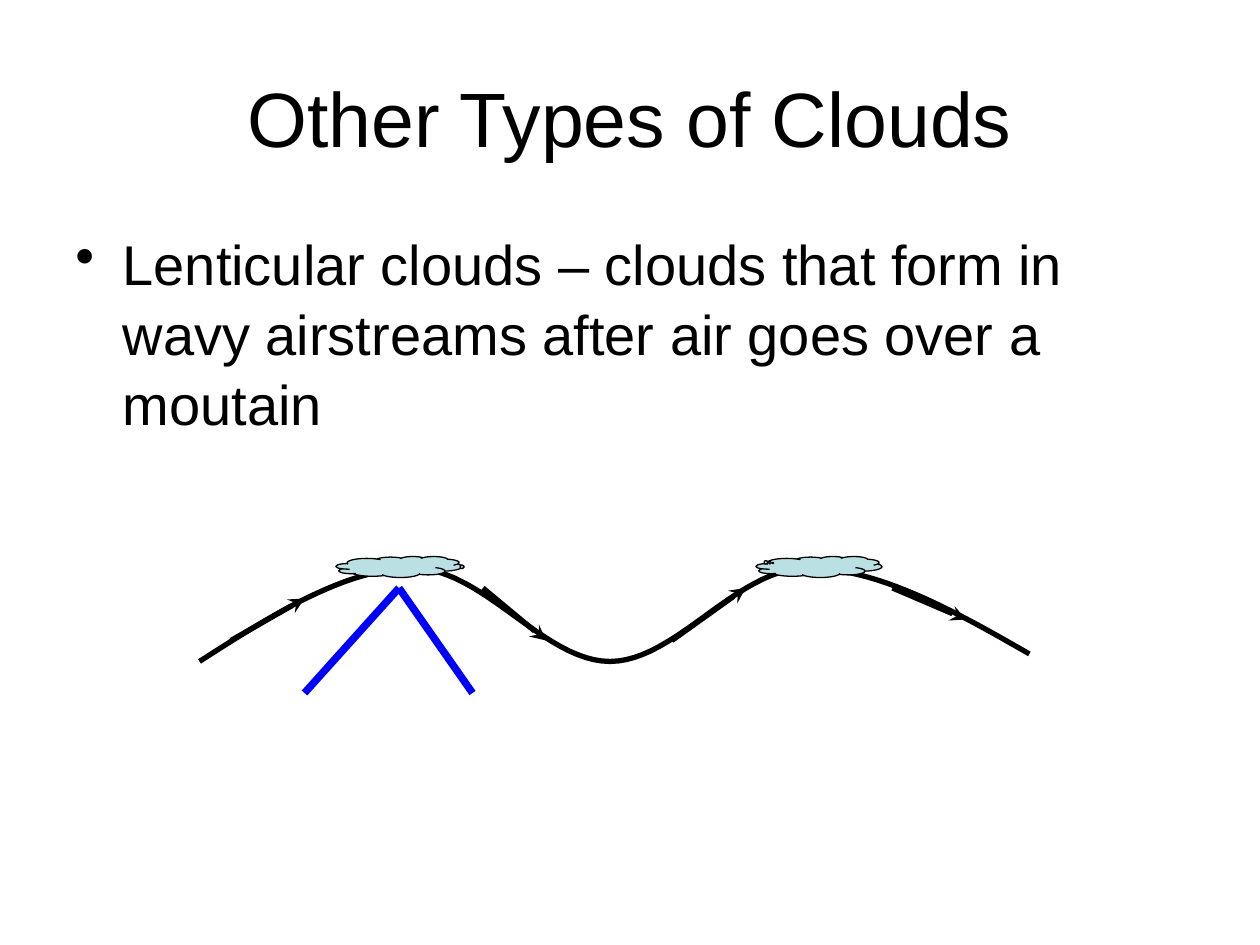
from lxml import etree
from pptx import Presentation
from pptx.dml.color import RGBColor
from pptx.enum.shapes import MSO_CONNECTOR, MSO_SHAPE
from pptx.enum.text import MSO_ANCHOR, PP_ALIGN
from pptx.oxml.ns import qn
from pptx.util import Pt

BLACK = RGBColor(0x00, 0x00, 0x00)
BLUE = RGBColor(0x00, 0x00, 0xFF)
CLOUD = RGBColor(0xBB, 0xE0, 0xE3)

prs = Presentation()
prs.slide_width, prs.slide_height = Pt(720), Pt(540)
s = prs.slides.add_slide(prs.slide_layouts[6])


def add_text(box, text, bullet=False, **fmt):
    tf = s.shapes.add_textbox(*[Pt(v) for v in box]).text_frame
    tf.word_wrap = True
    p = tf.paragraphs[0]
    if bullet:
        pPr = p._p.get_or_add_pPr()
        pPr.set("marL", str(Pt(27)))
        pPr.set("indent", str(-Pt(27)))
        etree.SubElement(pPr, qn("a:buChar")).set("char", "•")
    r = p.add_run()
    r.text = text
    r.font.color.rgb = BLACK
    for name, value in {"name": "Arial", **fmt}.items():
        setattr(r.font, name, value)
    return tf


def add_line(x1, y1, x2, y2, color, width, arrow=False):
    cx = s.shapes.add_connector(MSO_CONNECTOR.STRAIGHT, Pt(x1), Pt(y1), Pt(x2), Pt(y2))
    cx.line.color.rgb = color
    cx.line.width = Pt(width)
    if arrow:
        etree.SubElement(cx.line._get_or_add_ln(), qn("a:tailEnd")).set("type", "stealth")
    etree.SubElement(cx._element.spPr, qn("a:effectLst"))


# Title and bullet
tf = add_text((36, 21.6, 648, 90), "Other Types of Clouds", size=Pt(44))
tf.vertical_anchor = MSO_ANCHOR.MIDDLE
tf.paragraphs[0].alignment = PP_ALIGN.CENTER
tf = add_text((36, 126, 648, 356.4),
              "Lenticular clouds – clouds that form in wavy airstreams "
              "after air goes over a moutain", bullet=True, size=Pt(32))
tf.paragraphs[0].line_spacing = 1.04

# Wavy airstream: Bezier curves sampled into short segments
STEPS = 24
wave = [(114, 378), (155.5, 351.4), (197.3, 324.7), (236.2, 324.7),
        (275.8, 324.7), (311, 378), (348.5, 378),
        (385.9, 378), (420.5, 325.4), (460.1, 324.7),
        (500.4, 324), (544.3, 348.5), (588.2, 373.7)]
points = []
for i in range(0, len(wave) - 1, 3):
    for n in range(1, STEPS + 1):
        t = n / STEPS
        weights = ((1 - t) ** 3, 3 * t * (1 - t) ** 2, 3 * t ** 2 * (1 - t), t ** 3)
        points.append([Pt(sum(w * pt[axis] for w, pt in zip(weights, wave[i:i + 4])))
                       for axis in (0, 1)])
fb = s.shapes.build_freeform(Pt(wave[0][0]), Pt(wave[0][1]))
fb.add_line_segments(points, close=False)
sp = fb.convert_to_shape()
sp.shadow.inherit = False
sp.fill.background()
sp.line.color.rgb = BLACK
sp.line.width = Pt(3)

# Mountain
for foot_x in (174, 270):
    add_line(foot_x, 396, 228, 336, BLUE, 4.25)

# Wind arrows
for ends in ((132, 366, 174, 342), (510, 336, 552, 354),
             (384, 366, 426, 336), (276, 336, 312, 366)):
    add_line(*ends, BLACK, 3, arrow=True)

# Lenticular clouds
for x, tip in ((432, (-0.365, -0.188)), (192, (0.507, -0.01))):
    sp = s.shapes.add_shape(MSO_SHAPE.CLOUD_CALLOUT, Pt(x), Pt(318), Pt(72), Pt(12))
    sp.adjustments[0], sp.adjustments[1] = tip
    sp.shadow.inherit = False
    sp.fill.solid()
    sp.fill.fore_color.rgb = CLOUD
    sp.line.color.rgb = BLACK
    sp.line.width = Pt(0.75)

prs.save("out.pptx")
